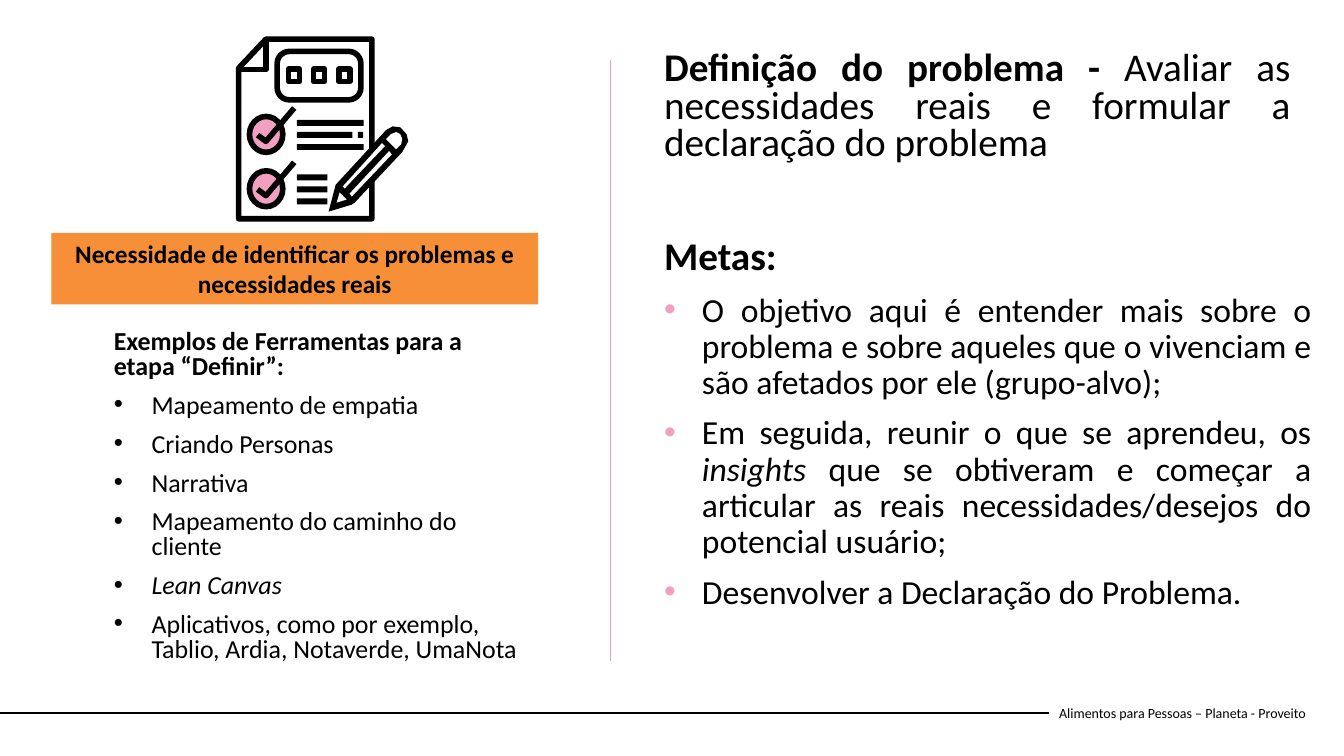
from lxml import etree
from pptx import Presentation
from pptx.dml.color import RGBColor
from pptx.enum import shapes, text
from pptx.oxml import ns
from pptx.util import Pt

BLACK, WHITE, PINK, ORANGE = "000000", "FFFFFF", "F1A0C2", "F68F37"
STROKE = 4  # line weight of the checklist icon
rgb = RGBColor.from_string


def paint(shape, fill=None, line=None, weight=STROKE):
    """Set fill and outline (None leaves either empty) and drop the shadow."""
    shape.shadow.inherit = False
    if fill:
        shape.fill.solid()
        shape.fill.fore_color.rgb = rgb(fill)
    else:
        shape.fill.background()
    if line:
        shape.line.color.rgb = rgb(line)
        shape.line.width = Pt(weight)
    else:
        shape.line.fill.background()


def write(shape, paragraphs, spacing=1.0, before=0, align=text.PP_ALIGN.LEFT,
          anchor=text.MSO_ANCHOR.TOP):
    """Each paragraph is (size, bullet colour or None, [(words, font values), ...])."""
    frame = shape.text_frame
    frame.word_wrap = True
    frame.vertical_anchor = anchor
    for i, (size, bullet, runs) in enumerate(paragraphs):
        paragraph = frame.add_paragraph() if i else frame.paragraphs[0]
        layout = {"alignment": align, "line_spacing": spacing, "space_before": Pt(before)}
        for key, value in layout.items():
            setattr(paragraph, key, value)
        if bullet:
            props = paragraph._p.get_or_add_pPr()
            props.set("marL", str(Pt(27)))
            props.set("indent", str(Pt(-27)))
            colour = etree.SubElement(props, ns.qn("a:buClr"))
            etree.SubElement(colour, ns.qn("a:srgbClr"), val=bullet)
            etree.SubElement(props, ns.qn("a:buFont"), typeface="Arial")
            etree.SubElement(props, ns.qn("a:buChar"), char="•")
        for words, style in runs:
            run = paragraph.add_run()
            run.text = words
            run.font.color.rgb = rgb(BLACK)
            for key, value in {"name": "Calibri", "size": Pt(size), **style}.items():
                setattr(run.font, key, value)


bold, italic, plain = {"bold": True}, {"italic": True}, {}

prs = Presentation()
prs.slide_width, prs.slide_height = Pt(960), Pt(540)
slide = prs.slides.add_slide(prs.slide_layouts[6])
canvas = slide.shapes

# Footer
footer = canvas.add_textbox(Pt(749.5), Pt(494.6), Pt(196.6), Pt(28.8))
write(footer, [(10, None, [("Alimentos para Pessoas – Planeta - Proveito", plain)])],
      anchor=text.MSO_ANCHOR.MIDDLE)

# Goals and problem definition
goals = canvas.add_textbox(Pt(467.3), Pt(165.6), Pt(476.6), Pt(293))
write(goals, [
    (28, None, [("Metas:", bold)]),
    (24, PINK, [("O objetivo aqui é entender mais sobre o problema e sobre aqueles "
                 "que o vivenciam e são afetados por ele (grupo-alvo);", plain)]),
    (24, PINK, [("Em seguida, reunir o que se aprendeu, os ", plain),
                ("insights", italic),
                (" que se obtiveram e começar a articular as reais "
                 "necessidades/desejos do potencial usuário;", plain)]),
    (24, PINK, [("Desenvolver a Declaração do Problema.", plain)]),
], 0.9, 10, text.PP_ALIGN.JUSTIFY)

definition = canvas.add_textbox(Pt(467.3), Pt(33.1), Pt(461.5), Pt(90))
write(definition, [
    (28, None, [("Definição do problema - ", bold),
                ("Avaliar as necessidades reais e formular a declaração do problema",
                 plain)]),
], 0.8, 10, text.PP_ALIGN.JUSTIFY)

# Tools
tools = [
    ("Mapeamento de empatia", plain),
    ("Criando Personas", plain),
    ("Narrativa", plain),
    ("Mapeamento do caminho do cliente", plain),
    ("Lean Canvas", italic),
    ("Aplicativos, como por exemplo, Tablio, Ardia, Notaverde, UmaNota", plain),
]
examples = canvas.add_textbox(Pt(74.2), Pt(232.6), Pt(302.4), Pt(270.7))
write(examples,
      [(18.5, None, [("Exemplos de Ferramentas para a etapa “Definir”:", bold)])]
      + [(18.5, BLACK, [tool]) for tool in tools], 0.8, 10)

need = canvas.add_shape(shapes.MSO_SHAPE.RECTANGLE, Pt(36.7), Pt(166.3), Pt(347.8), Pt(51.1))
paint(need, ORANGE)
write(need, [(18, None, [("Necessidade de identificar os problemas e necessidades reais", bold)])],
      align=text.PP_ALIGN.CENTER, anchor=text.MSO_ANCHOR.MIDDLE)

# Checklist icon: preset shapes as (kind, left, top, width, height, fill, line)
RECT, OVAL = shapes.MSO_SHAPE.RECTANGLE, shapes.MSO_SHAPE.OVAL
ROUNDED = shapes.MSO_SHAPE.ROUNDED_RECTANGLE
parts = [(ROUNDED, 198, 36.7, 59.8, 34.6, None, BLACK)]
parts += [(RECT, 206 + 18 * i, 49.5, 8, 8.8, None, BLACK) for i in range(3)]
parts += [(OVAL, 178.2, top, 23.8, 25.6, PINK, BLACK) for top in (83.2, 122)]
for first_top, widths in ((85.7, (47.7, 39.8, 47.7)), (124.6, (21.8, 21.8, 21.8))):
    parts += [(RECT, 212, first_top + 8.6 * i, width, 4.2, BLACK, None)
              for i, width in enumerate(widths)]
parts.append((RECT, 255.6, 94.3, 3.8, 4.2, BLACK, None))
for kind, left, top, width, height, fill, line in parts:
    part = canvas.add_shape(kind, Pt(left), Pt(top), Pt(width), Pt(height))
    paint(part, fill, line)
    if kind == ROUNDED:
        part.adjustments[0] = 0.25

# Checklist icon: outlines as (points, closed, fill, line)
sheet = [(190, 28), (265.7, 28), (265.7, 156.3), (170.5, 156.3), (170.5, 48.7)]
fold = [(190, 28), (190, 49.7), (170.5, 49.7)]
pencil = [(234.7, 151.2), (239.8, 132), (275.8, 92.9), (280.5, 90.3), (286, 91),
          (290.5, 96), (291.6, 101), (287.3, 108.7), (253.4, 144.7), (251.3, 146.2)]
pencil_gaps = [
    [(244.8, 133.2), (272.9, 102.2), (275, 104.4), (246.2, 134.6)],
    [(251.3, 140.4), (280, 110.2), (277.9, 108), (249.8, 138.2)],
    [(242.6, 137.5), (240.5, 144.7), (247.7, 142.6)],
    [(283, 106.6), (286.6, 103), (287.3, 99), (285.8, 95.8), (283, 94.3),
     (279.4, 95.8), (275.8, 99.4)],
]
outlines = [(sheet, True, None, BLACK), (fold, False, None, BLACK)]
outlines += [([(184, 96.5 + drop), (190, 101 + drop), (210.2, 77.2 + drop)],
              False, None, BLACK) for drop in (0, 38.8)]
outlines.append((pencil, True, BLACK, None))
outlines += [(gap, True, WHITE, None) for gap in pencil_gaps]
for points, closed, fill, line in outlines:
    start, *rest = [(Pt(x), Pt(y)) for x, y in points]
    builder = canvas.build_freeform(*start)
    builder.add_line_segments(rest, close=closed)
    paint(builder.convert_to_shape(), fill, line)

# Rules
rules = [(0, 509, 749.5, 509, BLACK, 1.5), (436.3, 43.2, 436.3, 472.3, PINK, 0.5)]
for x1, y1, x2, y2, colour, weight in rules:
    rule = canvas.add_connector(shapes.MSO_CONNECTOR.STRAIGHT, Pt(x1), Pt(y1), Pt(x2), Pt(y2))
    rule.line.color.rgb = rgb(colour)
    rule.line.width = Pt(weight)
    etree.SubElement(rule._element.spPr, ns.qn("a:effectLst"))
    if colour == BLACK:
        rule.end_connect(footer, 1)

prs.save("out.pptx")
